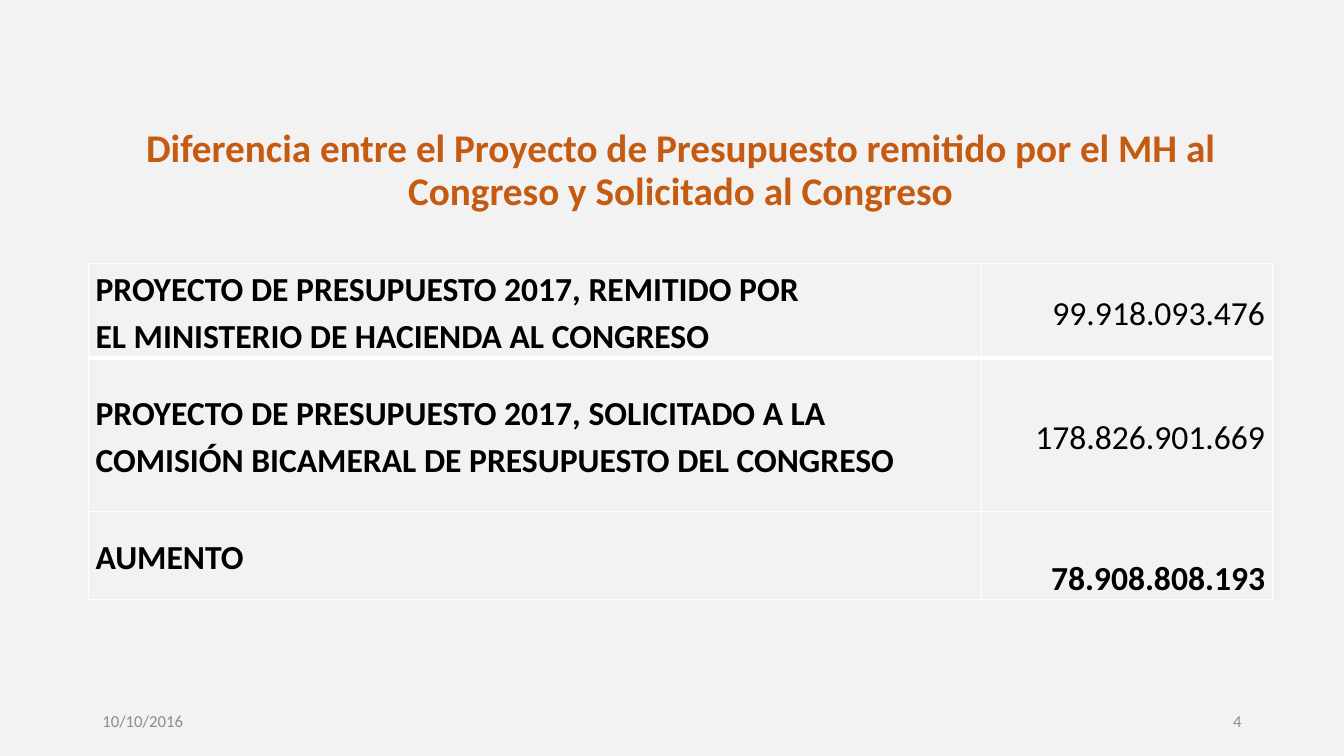
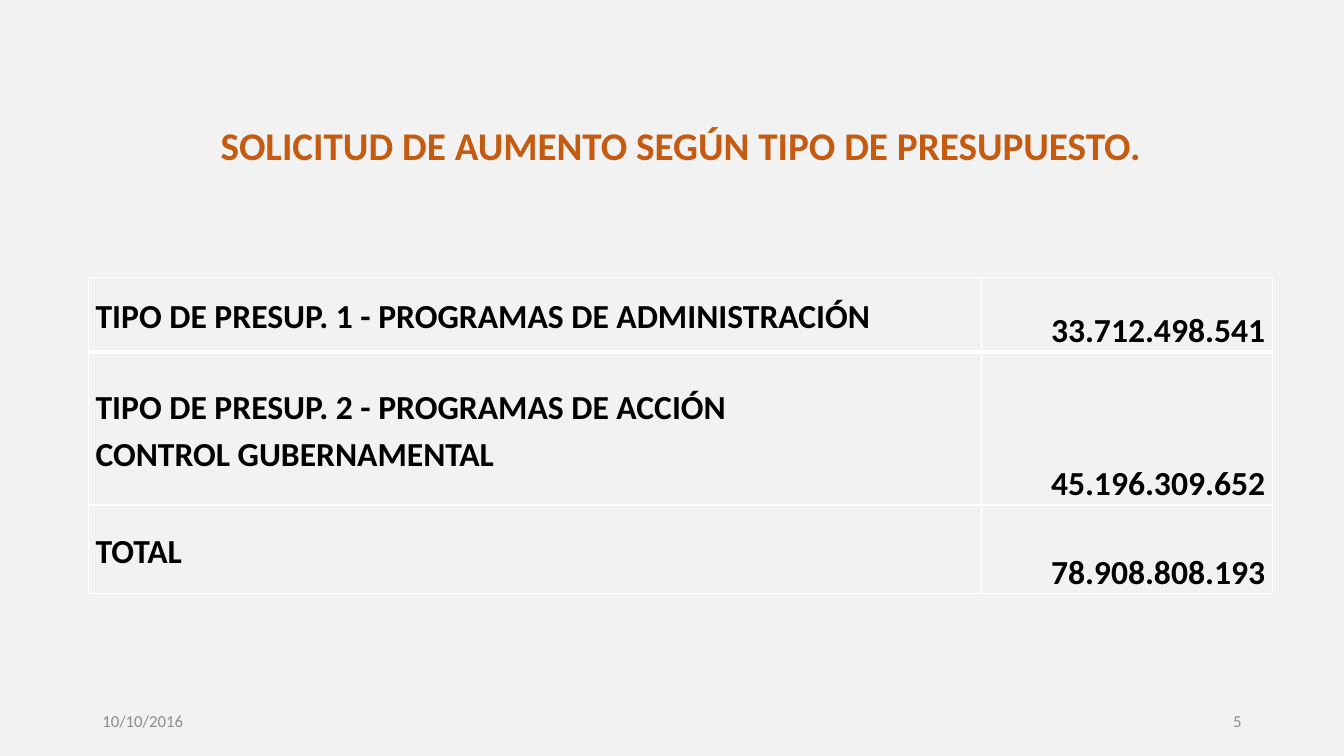
from lxml.etree import SubElement
from pptx import Presentation
from pptx.dml.color import RGBColor
from pptx.enum.text import MSO_ANCHOR, PP_ALIGN
from pptx.oxml.ns import qn
from pptx.util import Pt

PX = 9525  # EMU in one px, 96 px to the inch
WIDTH, HEIGHT = 1280, 720
COLORS = {
    "background": "F2F2F2",
    "title": "C55A11",
    "text": "000000",
    "footer": "8C8C8C",
    "border": "FFFFFF",
}
FONT = "Calibri"
DATE = "10/10/2016"
LEFT = 84
COLUMNS = (851, 277)


class Deck:
    def __init__(self):
        self.presentation = Presentation()
        self.presentation.slide_width = WIDTH * PX
        self.presentation.slide_height = HEIGHT * PX
        self.slide = None

    def new_slide(self, number):
        self.slide = self.presentation.slides.add_slide(self.presentation.slide_layouts[6])
        background = self.slide.background.fill
        background.solid()
        background.fore_color.rgb = RGBColor.from_string(COLORS["background"])
        # Footer: date on the left, slide number on the right
        self.text(DATE, (88, 667, 288, 38), 12, "footer", anchor=MSO_ANCHOR.MIDDLE)
        self.text(str(number), (904, 667, 288, 38), 12, "footer",
                  align=PP_ALIGN.RIGHT, anchor=MSO_ANCHOR.MIDDLE)

    def add_lines(self, frame, lines, size, color, bold=False, align=PP_ALIGN.LEFT, spacing=1.0):
        for index, line in enumerate(lines):
            paragraph = frame.add_paragraph() if index else frame.paragraphs[0]
            paragraph.alignment = align
            paragraph.line_spacing = spacing
            run = paragraph.add_run()
            run.text = line
            run.font.name = FONT
            run.font.size = Pt(size)
            run.font.bold = bold
            run.font.color.rgb = RGBColor.from_string(COLORS[color])

    def text(self, words, box, size, color, anchor=MSO_ANCHOR.TOP, **style):
        frame = self.slide.shapes.add_textbox(*(length * PX for length in box)).text_frame
        frame.word_wrap = True
        frame.vertical_anchor = anchor
        self.add_lines(frame, [words], size, color, **style)

    def title(self, words, top, height):
        self.text(words, (LEFT, top, sum(COLUMNS), height), 28, "title",
                  bold=True, align=PP_ALIGN.CENTER, spacing=0.9)

    def borders(self, cell, top, bottom):
        properties = cell._tc.get_or_add_tcPr()
        widths = {"lnL": 1, "lnR": 1, "lnT": top, "lnB": bottom}
        for position, (side, width) in enumerate(widths.items()):
            line = SubElement(properties, qn(f"a:{side}"), w=str(Pt(width)))
            fill = SubElement(line, qn("a:solidFill"))
            SubElement(fill, qn("a:srgbClr"), val=COLORS["border"])
            properties.insert(position, line)  # borders come before the fill

    def budget_table(self, top, heights, rows):
        table = self.slide.shapes.add_table(
            len(rows), len(COLUMNS), LEFT * PX, top * PX,
            sum(COLUMNS) * PX, sum(heights) * PX).table
        table.first_row = table.horz_banding = False
        for column, width in zip(table.columns, COLUMNS):
            column.width = width * PX
        for index, (label, amount, strong) in enumerate(rows):
            table.rows[index].height = heights[index] * PX
            label_cell, amount_cell = table.rows[index].cells
            for cell in (label_cell, amount_cell):
                cell.margin_left = cell.margin_right = 7 * PX
                cell.margin_top = cell.margin_bottom = 0
                cell.vertical_anchor = MSO_ANCHOR.MIDDLE
                cell.fill.background()
                # A thick rule separates the first row from the rest
                self.borders(cell, top=3 if index == 1 else 1, bottom=3 if index == 0 else 1)
            self.add_lines(label_cell.text_frame, label, 24, "text", bold=True, spacing=1.15)
            if strong:
                amount_cell.vertical_anchor = MSO_ANCHOR.BOTTOM
            self.add_lines(amount_cell.text_frame, [amount], 24, "text", bold=strong,
                           align=PP_ALIGN.RIGHT, spacing=1.0 if strong else 1.15)


def main():
    deck = Deck()

    # Difference between the two budget proposals
    deck.new_slide(4)
    deck.title("Diferencia entre el Proyecto de Presupuesto remitido por el MH al "
               "Congreso y Solicitado al Congreso", 118, 92)
    deck.budget_table(251, (90, 146, 84), [
        (["PROYECTO DE PRESUPUESTO 2017, REMITIDO POR",
          "EL MINISTERIO DE HACIENDA AL CONGRESO"], "99.918.093.476", False),
        (["PROYECTO DE PRESUPUESTO 2017, SOLICITADO A LA",
          "COMISIÓN BICAMERAL DE PRESUPUESTO DEL CONGRESO"], "178.826.901.669", False),
        (["AUMENTO"], "78.908.808.193", True),
    ])

    # Requested increase by budget type
    deck.new_slide(5)
    deck.title("SOLICITUD DE AUMENTO SEGÚN TIPO DE PRESUPUESTO.", 116, 57)
    deck.budget_table(264, (71, 146, 84), [
        (["TIPO DE PRESUP. 1 - PROGRAMAS DE ADMINISTRACIÓN"], "33.712.498.541", True),
        (["TIPO DE PRESUP. 2 - PROGRAMAS DE ACCIÓN",
          "CONTROL GUBERNAMENTAL"], "45.196.309.652", True),
        (["TOTAL"], "78.908.808.193", True),
    ])

    deck.presentation.save("out.pptx")


if __name__ == "__main__":
    main()
